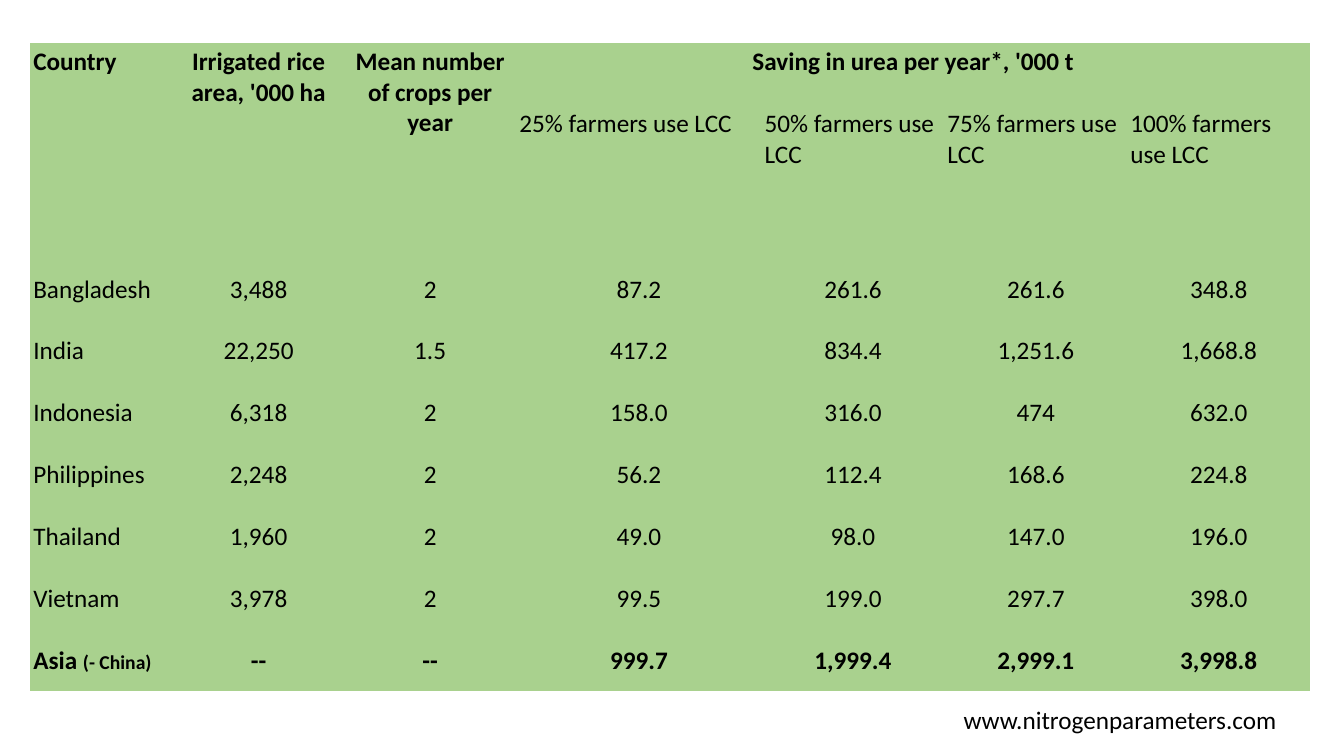
from dataclasses import dataclass

from pptx import Presentation
from pptx.dml.color import RGBColor as Rgb
from pptx.enum.text import MSO_ANCHOR as Anchor, PP_ALIGN as Align
from pptx.oxml.ns import qn
from pptx.util import Pt

MAIN_HEADINGS = [
    "Country",
    "Irrigated rice area, '000 ha",
    "Mean number of crops per year",
    "Saving in urea per year*, '000 t",
]
ADOPTION_LEVELS = ["25%", "50%", "75%", "100%"]
COUNTRIES = [
    ("Bangladesh", "3,488", "2", "87.2", "261.6", "261.6", "348.8"),
    ("India", "22,250", "1.5", "417.2", "834.4", "1,251.6", "1,668.8"),
    ("Indonesia", "6,318", "2", "158.0", "316.0", "474", "632.0"),
    ("Philippines", "2,248", "2", "56.2", "112.4", "168.6", "224.8"),
    ("Thailand", "1,960", "2", "49.0", "98.0", "147.0", "196.0"),
    ("Vietnam", "3,978", "2", "99.5", "199.0", "297.7", "398.0"),
]
TOTAL = ("Asia ", "--", "--", "999.7", "1,999.4", "2,999.1", "3,998.8")
TOTAL_NOTE = "(- China)"
WEBSITE = "www.nitrogenparameters.com"

SLIDE_SIZE = (960, 540)
TABLE_ORIGIN = (21.6, 31)
COLUMN_WIDTHS = [102.3, 121.8, 123.2, 175.1] + [130.67] * 3
ROW_HEIGHT, LEVEL_ROW_HEIGHT = 44.18, 109.5
WEBSITE_BOX = (579.6, 499.7, 354.2, 28.8)
WEBSITE_RIGHT_MARGIN = 22
CELL_MARGIN = 2.2
NO_STYLE_NO_GRID = "{2D5ABB26-0587-4C30-8999-92F81FD0307C}"


@dataclass(frozen=True)
class Theme:
    font: str = "Calibri"
    text: Rgb = Rgb(0, 0, 0)
    table: Rgb = Rgb(0xA9, 0xD1, 0x8E)
    body: int = 18
    note: int = 14


THEME = Theme()


def add_span(para, text, size=THEME.body, bold=False):
    span = para.add_run()
    span.text = text
    for name, value in {"name": THEME.font, "size": Pt(size), "bold": bold}.items():
        setattr(span.font, name, value)
    span.font.color.rgb = THEME.text


def write_cell(cell, text, bold=False, align=Align.CENTER, anchor=Anchor.MIDDLE):
    cell.vertical_anchor = anchor
    para = cell.text_frame.paragraphs[0]
    para.alignment = align
    add_span(para, text, bold=bold)


def add_savings_table(page):
    row_heights = [ROW_HEIGHT, LEVEL_ROW_HEIGHT] + [ROW_HEIGHT] * (len(COUNTRIES) + 1)
    size = (sum(COLUMN_WIDTHS), sum(row_heights))
    frame = page.shapes.add_table(
        len(row_heights), len(COLUMN_WIDTHS), *map(Pt, TABLE_ORIGIN + size)
    )
    next(frame.element.iter(qn("a:tableStyleId"))).text = NO_STYLE_NO_GRID
    table = frame.table
    table.first_row = table.horz_banding = False
    for column, width in zip(table.columns, COLUMN_WIDTHS):
        column.width = Pt(width)
    for row, height in zip(table.rows, row_heights):
        row.height = Pt(height)
    for cell in table.iter_cells():
        cell.fill.solid()
        cell.fill.fore_color.rgb = THEME.table
        for side in ("left", "right", "top", "bottom"):
            setattr(cell, f"margin_{side}", Pt(CELL_MARGIN))
    return table


def fill_headings(table):
    savings = len(MAIN_HEADINGS) - 1
    for index, heading in enumerate(MAIN_HEADINGS):
        cell = table.cell(0, index)
        if index < savings:
            cell.merge(table.cell(1, index))
        else:
            cell.merge(table.cell(0, len(COLUMN_WIDTHS) - 1))
        align = Align.CENTER if index else Align.LEFT
        write_cell(cell, heading, True, align, Anchor.TOP)
    for index, level in enumerate(ADOPTION_LEVELS, savings):
        write_cell(table.cell(1, index), f"{level} farmers use LCC",
                   align=Align.LEFT, anchor=Anchor.TOP)


def fill_figures(table):
    for row, values in enumerate(COUNTRIES + [TOTAL], 2):
        for column, value in enumerate(values):
            align = Align.CENTER if column else Align.LEFT
            write_cell(table.cell(row, column), value, values is TOTAL, align)
    total_label = table.cell(len(COUNTRIES) + 2, 0).text_frame.paragraphs[0]
    add_span(total_label, TOTAL_NOTE, THEME.note, True)


def add_website(page):
    frame = page.shapes.add_textbox(*map(Pt, WEBSITE_BOX)).text_frame
    frame.word_wrap = True
    frame.margin_right = Pt(WEBSITE_RIGHT_MARGIN)
    para = frame.paragraphs[0]
    para.alignment = Align.RIGHT
    add_span(para, WEBSITE)


def main():
    deck = Presentation()
    deck.slide_width, deck.slide_height = map(Pt, SLIDE_SIZE)
    page = deck.slides.add_slide(deck.slide_layouts.get_by_name("Blank"))
    table = add_savings_table(page)
    fill_headings(table)
    fill_figures(table)
    add_website(page)
    deck.save("out.pptx")


if __name__ == "__main__":
    main()
